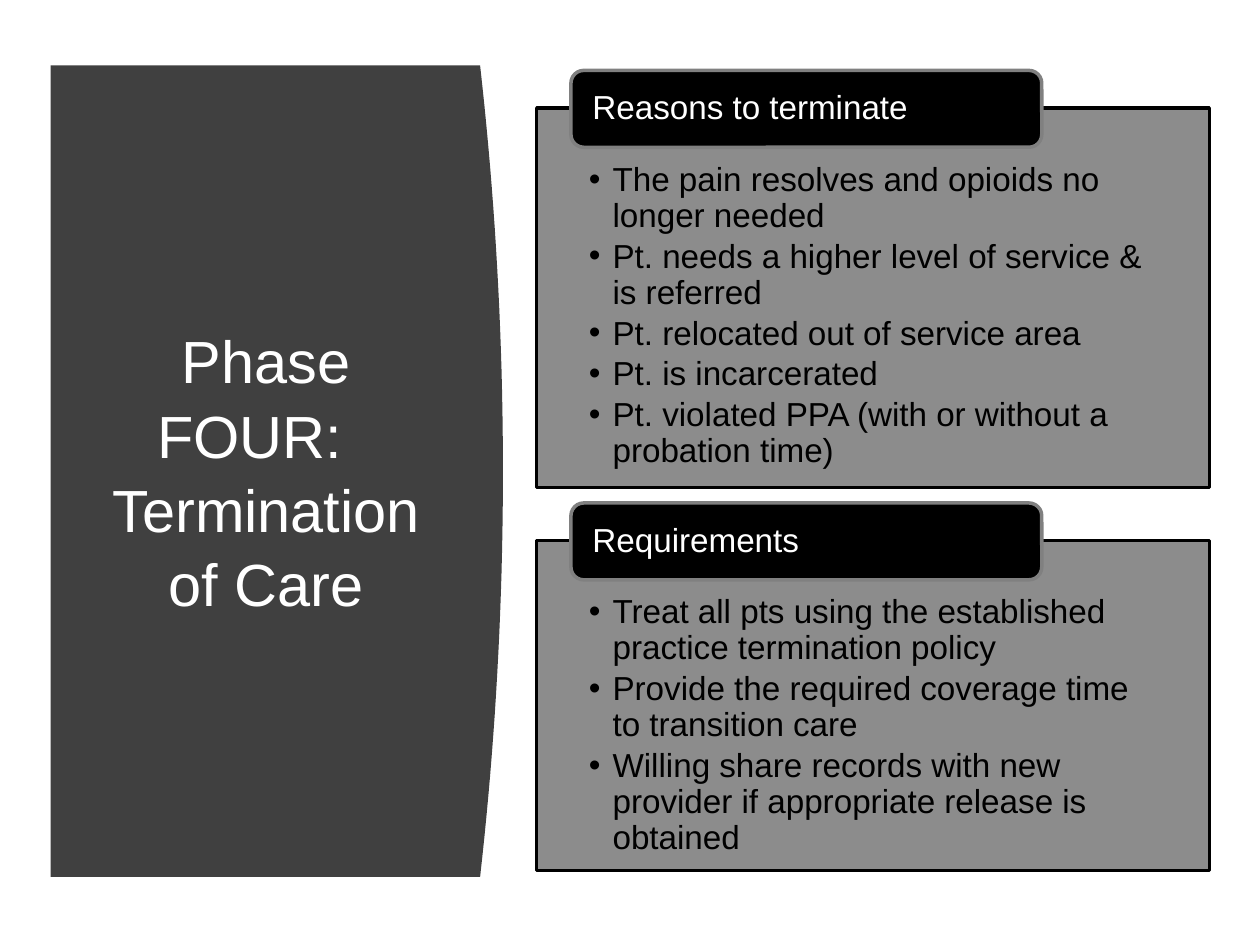
from lxml import etree
from pptx import Presentation
from pptx.dml.color import RGBColor
from pptx.enum.shapes import MSO_SHAPE
from pptx.enum.text import MSO_ANCHOR, PP_ALIGN
from pptx.oxml.ns import qn
from pptx.util import Cm, Pt

RECT = MSO_SHAPE.RECTANGLE
ROUND = MSO_SHAPE.ROUNDED_RECTANGLE
TOP, MIDDLE = MSO_ANCHOR.TOP, MSO_ANCHOR.MIDDLE
LEFT, CENTER = PP_ALIGN.LEFT, PP_ALIGN.CENTER

COLOURS = {"banner": "404040", "grey": "808080", "black": "000000", "white": "FFFFFF"}
FONT = "Arial"
BODY_SIZE = 19
CURVE_STEPS = 40
PANELS = [
    (2.18, 7.65, "Reasons to terminate", [
        "The pain resolves and opioids no longer needed",
        "Pt. needs a higher level of service & is referred",
        "Pt. relocated out of service area",
        "Pt. is incarcerated",
        "Pt. violated PPA (with or without a probation time)",
    ]),
    (10.9, 6.65, "Requirements", [
        "Treat all pts using the established practice termination policy",
        "Provide the required coverage time to transition care",
        "Willing share records with new provider if appropriate release is obtained",
    ]),
]


def colour(name):
    return RGBColor.from_string(COLOURS[name])


def paint(shape, fill, line=None):
    shape.shadow.inherit = False
    shape.fill.solid()
    shape.fill.fore_color.rgb = colour(fill)
    if line:
        shape.line.color.rgb = colour(line)
        shape.line.width = Pt(2)
    else:
        shape.line.fill.background()


def set_opacity(shape, percent):
    tint = shape._element.spPr.find(qn("a:solidFill"))[0]
    etree.SubElement(tint, qn("a:alpha"), val=str(percent * 1000))


def set_frame(shape, anchor, insets):
    frame = shape.text_frame
    frame.word_wrap = True
    frame.vertical_anchor = anchor
    frame.margin_left, frame.margin_top, frame.margin_right, frame.margin_bottom = map(Cm, insets)
    return frame


def set_para(para, align, spacing):
    para.alignment = align
    para.line_spacing = spacing


def add_span(para, text, size, tint):
    span = para.add_run()
    span.text = text
    span.font.name = FONT
    span.font.size = Pt(size)
    span.font.color.rgb = colour(tint)


def add_bullet(para):
    props = para._p.get_or_add_pPr()
    props.set("marL", str(Cm(0.48)))
    props.set("indent", str(-Cm(0.48)))
    etree.SubElement(props, qn("a:buFont"), typeface=FONT)
    etree.SubElement(props, qn("a:buChar"), char="•")


def add_banner(page, left, top, width, height):
    bulge = 0.46
    edge = left + width - bulge
    curve = []
    for step in range(CURVE_STEPS + 1):
        part = step / CURVE_STEPS
        across = edge + bulge * (1 - (2 * part - 1) ** 2)
        curve.append((Cm(across), Cm(top + height * part)))
    builder = page.shapes.build_freeform(Cm(left), Cm(top))
    builder.add_line_segments(curve + [(Cm(left), Cm(top + height))], close=True)
    paint(builder.convert_to_shape(), "banner")

    box = page.shapes.add_textbox(Cm(left + 0.79), Cm(top + 1.5), Cm(7.11), Cm(height - 3.05))
    para = set_frame(box, MIDDLE, (0.25, 0.13, 0.25, 0.13)).paragraphs[0]
    set_para(para, CENTER, 1.04)
    add_span(para, "Phase FOUR:  ", 34, "white")
    para.add_line_break()
    add_span(para, "Termination of Care", 34, "white")


def add_panel(page, left, top, width, height, heading, items):
    box = page.shapes.add_shape(RECT, Cm(left), Cm(top), Cm(width), Cm(height))
    paint(box, "grey", "black")
    set_opacity(box, 90)
    frame = set_frame(box, TOP, (1.05, 1.1, 1.05, 0.38))
    for index, item in enumerate(items):
        para = frame.add_paragraph() if index else frame.paragraphs[0]
        set_para(para, LEFT, 0.9)
        para.space_after = Pt(0.15 * BODY_SIZE)
        add_bullet(para)
        add_span(para, item, BODY_SIZE, "black")

    tab = page.shapes.add_shape(ROUND, Cm(left + 0.69), Cm(top - 0.76), Cm(0.7 * width), Cm(1.55))
    paint(tab, "black", "grey")
    para = set_frame(tab, MIDDLE, (0.36, 0, 0.36, 0)).paragraphs[0]
    set_para(para, LEFT, 0.9)
    add_span(para, heading, BODY_SIZE, "white")


def main():
    deck = Presentation()
    deck.slide_width, deck.slide_height = Cm(25.4), Cm(19.05)
    page = deck.slides.add_slide(deck.slide_layouts[6])
    add_banner(page, 1.02, 1.32, 9.12, 16.36)
    for top, height, heading, items in PANELS:
        add_panel(page, 10.82, top, 13.56, height, heading, items)
    deck.save("out.pptx")


if __name__ == "__main__":
    main()
